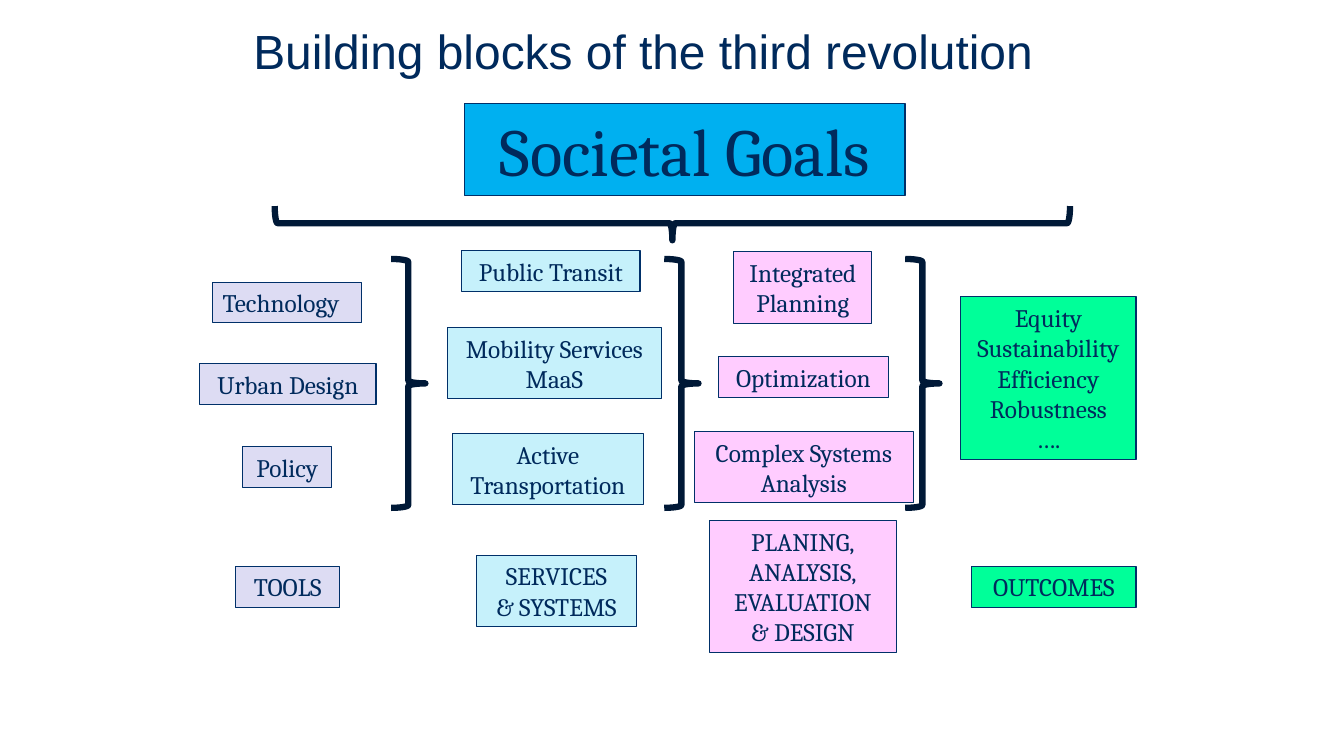
from dataclasses import dataclass

from pptx import Presentation
from pptx.dml.color import RGBColor
from pptx.enum.shapes import MSO_SHAPE as Shape
from pptx.enum.text import MSO_ANCHOR as Anchor, PP_ALIGN as Align
from pptx.util import Pt


@dataclass(frozen=True)
class Theme:
    title_font: str = "Arial"
    body_font: str = "Cambria"
    title_size: float = 34.2
    goal_size: float = 48
    body_size: float = 18
    line_height: float = 1.216
    margins: float = 7.2
    background: str = "FFFFFF"
    text: str = "002A5C"
    outline: str = "003069"
    brace: str = "001937"
    goal: str = "00B0F0"
    tools: str = "DDDCF3"
    services: str = "C6F1FB"
    planning: str = "FFCCFF"
    outcomes: str = "00FF99"


class SlideBuilder:
    """Draws styled elements on one slide; all lengths are in points."""

    def __init__(self, slide, theme):
        self.slide = slide
        self.theme = theme
        fill = slide.background.fill
        fill.solid()
        fill.fore_color.rgb = RGBColor.from_string(theme.background)

    def style(self, paragraph, font_name, size, align=Align.CENTER):
        paragraph.alignment = align
        paragraph.font.name = font_name
        paragraph.font.size = Pt(size)
        paragraph.font.color.rgb = RGBColor.from_string(self.theme.text)

    def outline(self, shape, color, width):
        shape.shadow.inherit = False
        shape.line.color.rgb = RGBColor.from_string(color)
        shape.line.width = Pt(width)

    def title(self, text, left, top, width, height):
        title = self.slide.shapes.title
        title.left, title.top = Pt(left), Pt(top)
        title.width, title.height = Pt(width), Pt(height)
        title.text_frame.text = text
        title.text_frame.vertical_anchor = Anchor.MIDDLE
        self.style(title.text_frame.paragraphs[0],
                   self.theme.title_font, self.theme.title_size)

    def box(self, text, left, top, width, fill, size=None, align=Align.CENTER):
        theme = self.theme
        size = size or theme.body_size
        lines = text.split("\n")
        # The box is as tall as its lines plus the top and bottom margins.
        height = theme.margins + theme.line_height * size * len(lines)
        shape = self.slide.shapes.add_shape(
            Shape.RECTANGLE, Pt(left), Pt(top), Pt(width), Pt(height))
        shape.fill.solid()
        shape.fill.fore_color.rgb = RGBColor.from_string(fill)
        self.outline(shape, theme.outline, 0.75)
        frame = shape.text_frame
        frame.word_wrap = True
        frame.text = text
        for paragraph in frame.paragraphs:
            self.style(paragraph, theme.body_font, size, align)

    def brace(self, left, top, height, width=24.5, rotation=0):
        shape = self.slide.shapes.add_shape(
            Shape.RIGHT_BRACE, Pt(left), Pt(top), Pt(width), Pt(height))
        shape.rotation = rotation
        shape.fill.background()
        self.outline(shape, self.theme.brace, 4.5)


def main():
    theme = Theme()
    presentation = Presentation()
    presentation.slide_width, presentation.slide_height = Pt(960), Pt(540)
    slide = presentation.slides.add_slide(presentation.slide_layouts[5])
    builder = SlideBuilder(slide, theme)

    # Heading and overall goal
    builder.title("Building blocks of the third revolution", 135.4, 9.4, 648, 52.6)
    builder.box("Societal Goals", 331.9, 74.2, 314.6, theme.goal, theme.goal_size)

    # Braces: one under the goal, one after each of the first three columns
    builder.brace(468, -124.6, 568.1, rotation=90)
    for left in (279.4, 474.5, 646.6):
        builder.brace(left, 185, 177.8)

    # Columns: blocks from top to bottom, the last one naming the column
    columns = {
        theme.tools: [
            ("Technology", 151.9, 201.6, 106.6),
            ("Urban Design", 142.6, 259.9, 126),
            ("Policy", 173.5, 319, 63.4),
            ("TOOLS", 168.5, 404.6, 74.2),
        ],
        theme.services: [
            ("Public Transit", 329.8, 179.3, 127.4),
            ("Mobility Services\nMaaS", 319.7, 234, 152.6),
            ("Active\nTransportation", 323.3, 309.6, 136.1),
            ("SERVICES\n& SYSTEMS", 340.6, 396.7, 113.8),
        ],
        theme.planning: [
            ("Integrated\nPlanning", 524.2, 180, 98.6),
            ("Optimization", 513.4, 254.9, 121),
            ("Complex Systems\nAnalysis", 496.1, 308.2, 156.2),
            ("PLANING,\nANALYSIS,\nEVALUATION\n& DESIGN", 506.9, 371.5, 133.2),
        ],
        theme.outcomes: [
            ("Equity\nSustainability\nEfficiency\nRobustness\n….", 686.2, 211.7, 125.3),
            ("OUTCOMES", 694.1, 404.6, 117.4),
        ],
    }
    for fill, blocks in columns.items():
        for text, left, top, width in blocks:
            align = Align.LEFT if text == "Technology" else Align.CENTER
            builder.box(text, left, top, width, fill, align=align)

    presentation.save("out.pptx")


if __name__ == "__main__":
    main()
